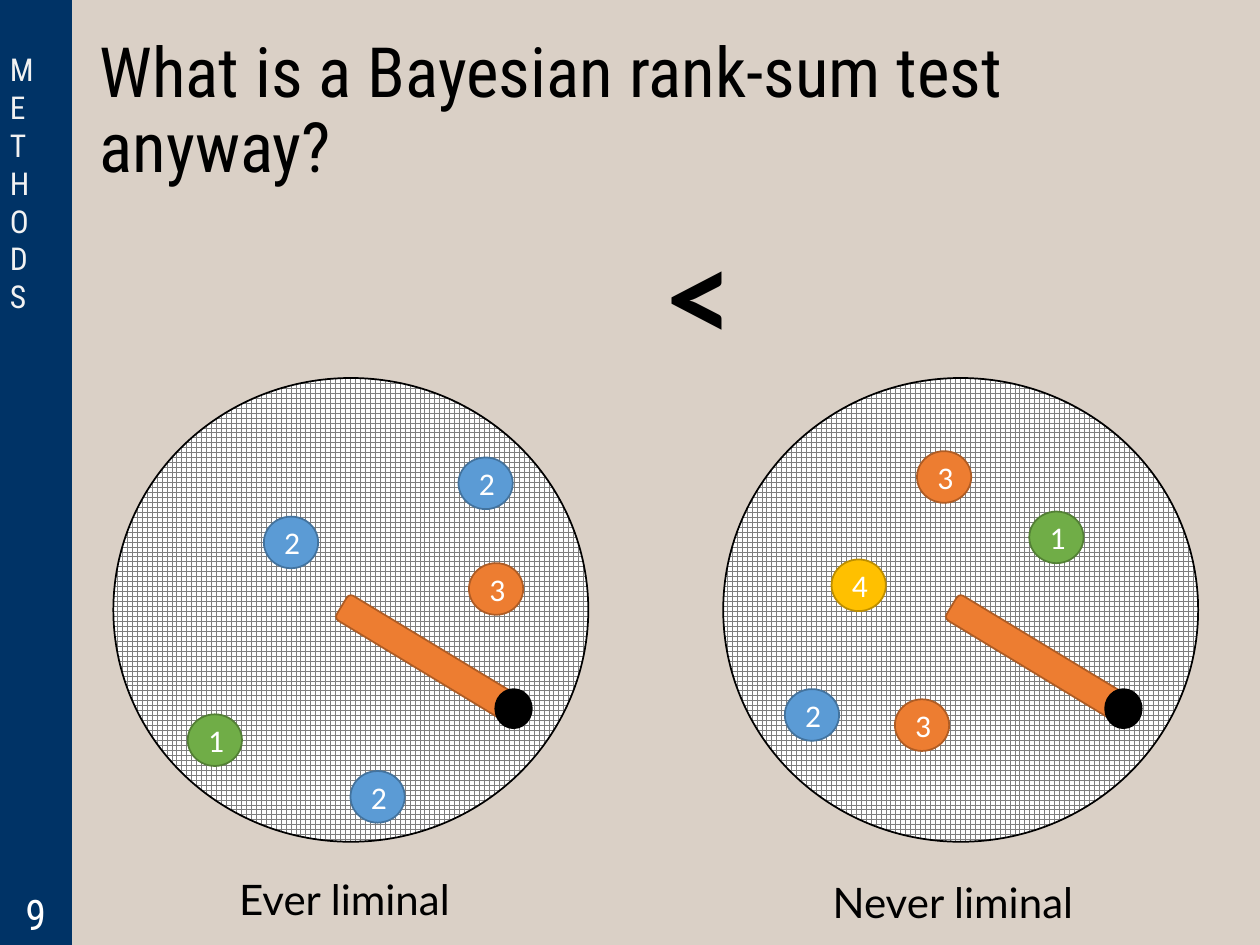
from pptx import Presentation
from pptx.dml.color import RGBColor
from pptx.enum.dml import MSO_PATTERN
from pptx.enum.shapes import MSO_SHAPE
from pptx.enum.text import MSO_ANCHOR, MSO_AUTO_SIZE, PP_ALIGN
from pptx.util import Pt

THEME = {
    "background": "DAD0C6",
    "band": "003366",
    "text": "000000",
    "light": "FFFFFF",
    "section": "F2F2F2",
    "grid": "7F7F7F",
    "handle": ("ED7D31", "AF5C24"),
    "balls": {
        1: ("70AD47", "538035"),
        2: ("5B9BD5", "43739E"),
        3: ("ED7D31", "AF5C24"),
        4: ("FFC000", "BD8E00"),
    },
    "heading_font": "Roboto Condensed",
    "label_font": "Lato",
    "ball_font": "Calibri",
    "title_size": 39.6,
    "sign_size": 72,
    "label_size": 24,
    "small_size": 18,
}


def write(sp, text, font, size, color, bold=False, align=PP_ALIGN.LEFT, **frame):
    tf = sp.text_frame
    for name, value in {"word_wrap": True, **frame}.items():
        setattr(tf, name, value)
    p = tf.paragraphs[0]
    p.alignment = align
    r = p.add_run()
    r.text = text
    for name, value in {"name": font, "size": Pt(size), "bold": bold}.items():
        setattr(r.font, name, value)
    r.font.color.rgb = RGBColor.from_string(color)
    return p


def draw(kind, box, fill, line):
    sp = s.shapes.add_shape(kind, *map(Pt, box))
    sp.shadow.inherit = False
    sp.fill.solid()
    sp.fill.fore_color.rgb = RGBColor.from_string(fill)
    sp.line.color.rgb = RGBColor.from_string(line)
    sp.line.width = Pt(1)
    return sp


prs = Presentation()
prs.slide_width, prs.slide_height = Pt(720), Pt(540)
s = prs.slides.add_slide(prs.slide_layouts[5])
s.background.fill.solid()
s.background.fill.fore_color.rgb = RGBColor.from_string(THEME["background"])

title = s.shapes.title
for name, value in {"left": 49.7, "top": 28.8, "width": 643.7, "height": 71.3}.items():
    setattr(title, name, Pt(value))
p = write(title, "What is a Bayesian rank-sum test anyway?", THEME["heading_font"],
          THEME["title_size"], THEME["text"],
          vertical_anchor=MSO_ANCHOR.MIDDLE, auto_size=MSO_AUTO_SIZE.NONE)
p.line_spacing = 0.9

draw(MSO_SHAPE.RECTANGLE, (0, 0, 41, 540), THEME["band"], THEME["band"])
number = s.shapes.add_textbox(Pt(0), Pt(504), Pt(41), Pt(36))
write(number, "9", THEME["heading_font"], THEME["label_size"], THEME["light"],
      align=PP_ALIGN.CENTER, auto_size=MSO_AUTO_SIZE.SHAPE_TO_FIT_TEXT)
section = s.shapes.add_textbox(Pt(-1.4), Pt(28.8), Pt(43.2), Pt(475.2))
write(section, "METHODS", THEME["heading_font"], THEME["small_size"], THEME["section"],
      vertical_anchor=MSO_ANCHOR.MIDDLE, margin_top=0, margin_bottom=0,
      auto_size=MSO_AUTO_SIZE.SHAPE_TO_FIT_TEXT)
section.text_frame._txBody.bodyPr.set("vert", "wordArtVert")

pans = [
    (64.8, [(1, 107.3, 408.2), (2, 150.8, 295.2), (2, 262, 261.4),
            (2, 200.3, 440.6), (3, 268, 321.8)]),
    (413.3, [(1, 588.2, 292.3), (4, 475.2, 319.7), (2, 448.5, 393.8),
             (3, 524, 257.8), (3, 511.4, 399.6)]),
]
for left, balls in pans:
    pan = draw(MSO_SHAPE.OVAL, (left, 216, 271.4, 265), THEME["light"], THEME["text"])
    pan.fill.patterned()
    pan.fill.pattern = MSO_PATTERN.LARGE_GRID
    pan.fill.fore_color.rgb = RGBColor.from_string(THEME["grid"])
    pan.fill.back_color.rgb = RGBColor.from_string(THEME["light"])
    handle = draw(MSO_SHAPE.ROUNDED_RECTANGLE, (left + 121.7, 369.4, 121.7, 16.6),
                  *THEME["handle"])
    handle.rotation = 211.2
    draw(MSO_SHAPE.OVAL, (left + 218.2, 393.8, 20.9, 22.3), THEME["text"], THEME["text"])
    for value, x, y in balls:
        ball = draw(MSO_SHAPE.OVAL, (x, y, 31, 29.5), *THEME["balls"][value])
        write(ball, str(value), THEME["ball_font"], THEME["small_size"], THEME["light"],
              align=PP_ALIGN.CENTER, vertical_anchor=MSO_ANCHOR.MIDDLE)

labels = [
    ("Ever liminal", (129.6, 495.4, 141.1, 36), THEME["label_size"], False),
    ("Never liminal", (468.7, 497.5, 160.6, 36), THEME["label_size"], False),
    ("<", (371.5, 121, 61.9, 94.3), THEME["sign_size"], True),
]
for text, box, size, bold in labels:
    label = s.shapes.add_textbox(*map(Pt, box))
    write(label, text, THEME["label_font"], size, THEME["text"], bold=bold,
          auto_size=MSO_AUTO_SIZE.SHAPE_TO_FIT_TEXT)

prs.save("out.pptx")
